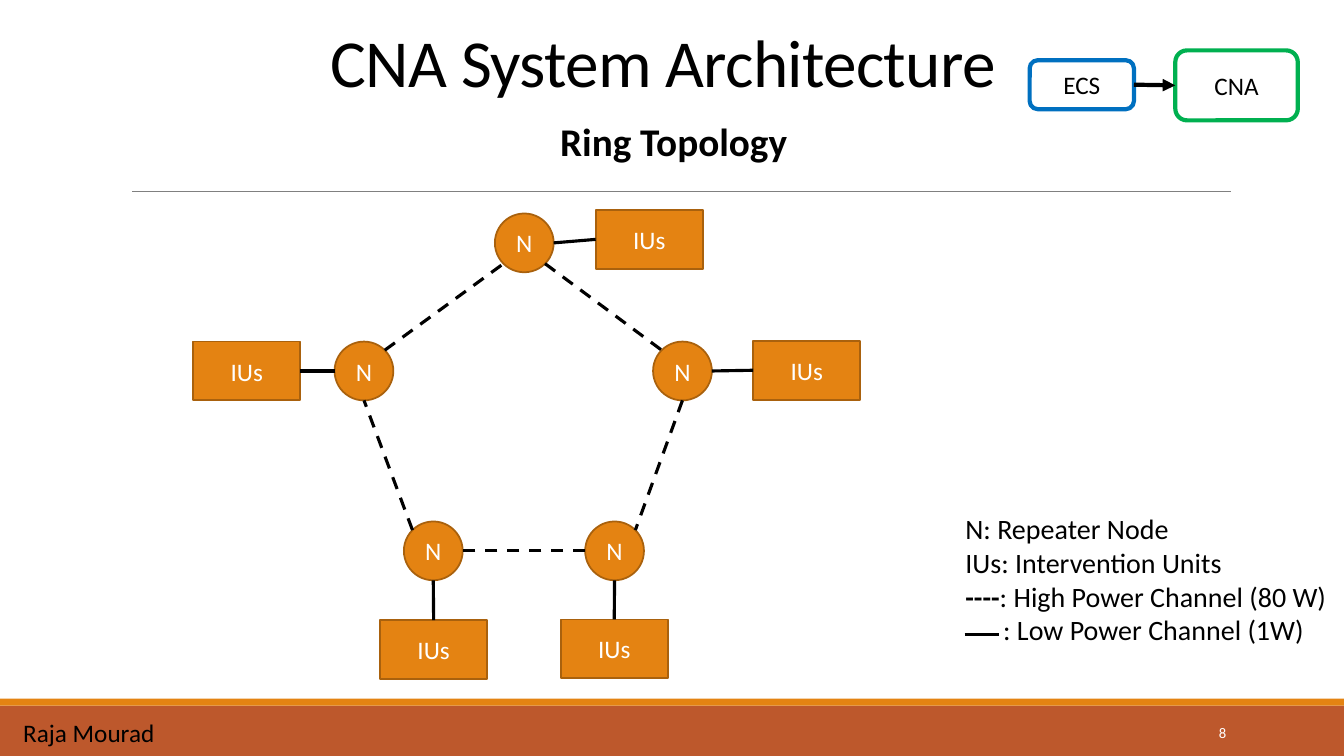
"""Build the slide on the ring topology of the CNA system."""
import math
from dataclasses import dataclass

import pptx
import pptx.dml.color
import pptx.enum.dml
import pptx.enum.shapes
import pptx.enum.text
import pptx.oxml.ns
import pptx.util
from lxml import etree

Pt = pptx.util.Pt
SHAPE = pptx.enum.shapes.MSO_SHAPE
ANCHOR = pptx.enum.text.MSO_ANCHOR
ALIGN = pptx.enum.text.PP_ALIGN


@dataclass(frozen=True)
class Theme:
    """Hold the colours, font and type sizes."""
    font: str = "Calibri"
    black: str = "000000"
    white: str = "FFFFFF"
    orange: str = "E48312"
    outline: str = "A9610D"
    rust: str = "BD582C"
    grey: str = "808080"
    blue: str = "0070C0"
    green: str = "00B050"
    title: float = 48
    subtitle: float = 28
    legend: float = 20
    label: float = 18
    number: float = 10.5


THEME = Theme()
NODE_SIZE = 42
UNIT_SIZE = (76.5, 42)
TOP, LEFT, BOTTOM, RIGHT = range(4)

NODES = {
    "top": (353.5, 152.5),
    "right": (466.5, 244),
    "lower right": (418, 372.5),
    "lower left": (288.5, 372.5),
    "left": (239, 244),
}
UNITS = {
    "top": (425.5, 150, 0, LEFT),
    "right": (538, 243.5, 0, LEFT),
    "lower right": (400.5, 442.5, 90, TOP),
    "lower left": (271.5, 443, 90, TOP),
    "left": (138, 244, 180, RIGHT),
}
CHANNELS = [
    ("top", 45, "right", 225),
    ("right", 90, "lower right", 315),
    ("lower right", 180, "lower left", 0),
    ("lower left", 225, "left", 90),
    ("left", 315, "top", 135),
]
LEGEND = [
    [("N: Repeater Node", False)],
    [("IUs: Intervention Units", False)],
    [("----", True), (": High Power Channel (80 W)", False)],
    [(": Low Power Channel (1W)", False)],
]


def rgb(value):
    """Return a colour object for a hex value."""
    return pptx.dml.color.RGBColor.from_string(value)


def write_text(shape, text, *, size, color=THEME.black, bold=False,
               align=ALIGN.LEFT, anchor=ANCHOR.TOP, wrap=True):
    """Fill a shape with a string or a list of paragraphs of (text, bold) runs."""
    frame = shape.text_frame
    frame.word_wrap = wrap
    frame.vertical_anchor = anchor
    frame.auto_size = pptx.enum.text.MSO_AUTO_SIZE.NONE
    paragraphs = [[(text, bold)]] if isinstance(text, str) else text
    for index, runs in enumerate(paragraphs):
        paragraph = frame.add_paragraph() if index else frame.paragraphs[0]
        paragraph.alignment = align
        for words, heavy in runs:
            run = paragraph.add_run()
            run.text = words
            run.font.name = THEME.font
            run.font.size = Pt(size)
            run.font.bold = heavy
            run.font.color.rgb = rgb(color)


def add_label(slide, box, text, **format_options):
    """Add a text box."""
    label = slide.shapes.add_textbox(*map(Pt, box))
    write_text(label, text, **format_options)
    return label


def add_block(slide, kind, box, text="", *, fill=None, line=None, width=1.25,
              color=THEME.white):
    """Add a preset shape with a centred label."""
    block = slide.shapes.add_shape(kind, *map(Pt, box))
    block.shadow.inherit = False
    if fill:
        block.fill.solid()
        block.fill.fore_color.rgb = rgb(fill)
    else:
        block.fill.background()
    if line:
        block.line.color.rgb = rgb(line)
        block.line.width = Pt(width)
    else:
        block.line.fill.background()
    if text:
        write_text(block, text, size=THEME.label, color=color,
                   align=ALIGN.CENTER, anchor=ANCHOR.MIDDLE)
    return block


def add_link(slide, start, end, *, color=THEME.black, width=2.25, dashed=False,
             arrow=False):
    """Add a straight line, joining any end given as a (shape, side) pair."""
    points = [(0, 0) if hasattr(at[0], "shape_id") else at for at in (start, end)]
    link = slide.shapes.add_connector(
        pptx.enum.shapes.MSO_CONNECTOR.STRAIGHT, *map(Pt, points[0] + points[1]))
    for at, join in ((start, link.begin_connect), (end, link.end_connect)):
        if hasattr(at[0], "shape_id"):
            join(*at)
    link.line.color.rgb = rgb(color)
    link.line.width = Pt(width)
    if dashed:
        link.line.dash_style = pptx.enum.dml.MSO_LINE.DASH
    qn = pptx.oxml.ns.qn
    if arrow:
        etree.SubElement(link.line._get_or_add_ln(), qn("a:tailEnd"), type="triangle")
    etree.SubElement(link._element.spPr, qn("a:effectLst"))


def rim_point(node, degrees):
    """Return the point on a node's rim, clockwise from the right."""
    radius = NODE_SIZE / 2
    angle = math.radians(degrees)
    left, top = NODES[node]
    return (left + radius * (1 + math.cos(angle)), top + radius * (1 + math.sin(angle)))


def add_heading(slide):
    """Place the title, the subtitle and the rule below them."""
    title = slide.shapes.title
    title.left, title.top, title.width, title.height = map(Pt, (229, -4.5, 506, 80.5))
    write_text(title, "CNA System Architecture", size=THEME.title, anchor=ANCHOR.BOTTOM)
    heading = title.text_frame.paragraphs[0]
    heading.line_spacing = 0.85
    heading.runs[0].font._element.set("spc", "-50")
    add_label(slide, (393, 80, 178.5, 41), "Ring Topology", size=THEME.subtitle,
              bold=True, wrap=False)
    add_link(slide, (94.5, 136.5), (879, 136.5), color=THEME.grey, width=0.5)


def add_footer(slide):
    """Draw the footer bands, the author and the slide number."""
    add_block(slide, SHAPE.RECTANGLE, (0, 504, 960, 36), fill=THEME.rust)
    add_block(slide, SHAPE.RECTANGLE, (0, 499, 960, 5), fill=THEME.orange)
    add_label(slide, (9.5, 508.5, 109.5, 29), "Raja Mourad", size=THEME.label, wrap=False)
    add_label(slide, (780, 508.5, 103, 29), "8", size=THEME.number, color=THEME.white,
              align=ALIGN.RIGHT, anchor=ANCHOR.MIDDLE)


def add_overview(slide):
    """Draw the small flow from ECS to CNA."""
    ecs = add_block(slide, SHAPE.ROUNDED_RECTANGLE, (735.5, 43, 74.5, 35), "ECS",
                    line=THEME.blue, width=3, color=THEME.black)
    cna = add_block(slide, SHAPE.ROUNDED_RECTANGLE, (839.5, 36, 87.5, 50), "CNA",
                    line=THEME.green, width=3, color=THEME.black)
    add_link(slide, (ecs, RIGHT), (cna, LEFT), width=3, arrow=True)


def add_ring(slide):
    """Draw the nodes, their units and the channels between them."""
    style = {"fill": THEME.orange, "line": THEME.outline}
    for corner in NODES.values():
        add_block(slide, SHAPE.OVAL, (*corner, NODE_SIZE, NODE_SIZE), "N", **style)
    for first, first_angle, second, second_angle in CHANNELS:
        add_link(slide, rim_point(first, first_angle), rim_point(second, second_angle),
                 dashed=True)
    for node, (left, top, angle, side) in UNITS.items():
        unit = add_block(slide, SHAPE.RECTANGLE, (left, top, *UNIT_SIZE), "IUs", **style)
        add_link(slide, rim_point(node, angle), (unit, side))


def add_legend(slide):
    """Explain the abbreviations and line styles."""
    legend = add_label(slide, (682.5, 362, 274.5, 104.5), LEGEND, size=THEME.legend,
                       wrap=False)
    low_power = legend.text_frame.paragraphs[-1]
    low_power._p.get_or_add_pPr().set("marL", str(Pt(27)))
    add_link(slide, (689, 453.5), (713.5, 453.5))


def main():
    """Build and save the slide."""
    deck = pptx.Presentation()
    deck.slide_width, deck.slide_height = Pt(960), Pt(540)
    slide = deck.slides.add_slide(deck.slide_layouts.get_by_name("Title Only"))
    for add_part in (add_heading, add_footer, add_overview, add_ring, add_legend):
        add_part(slide)
    deck.save("out.pptx")


if __name__ == "__main__":
    main()
